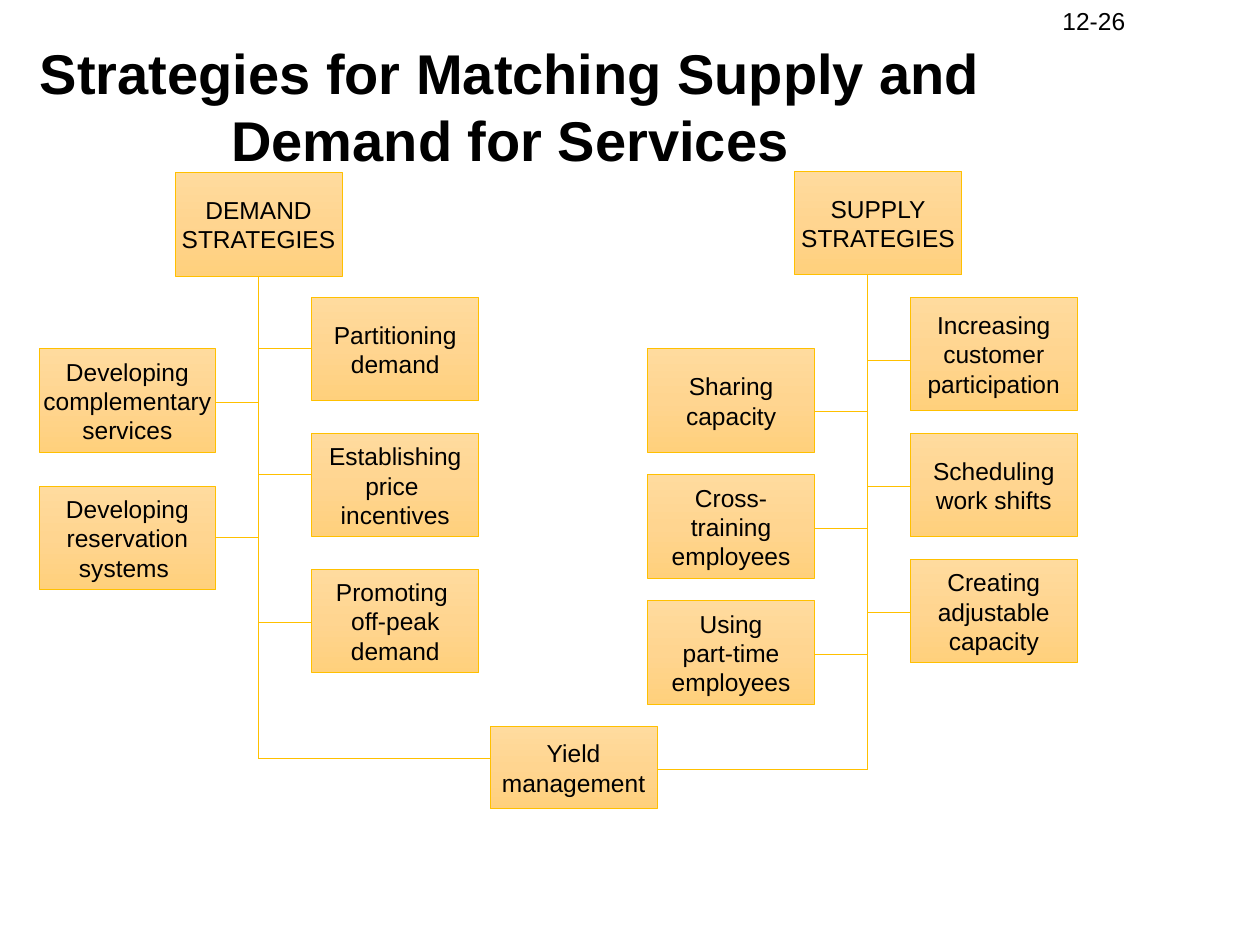
from copy import deepcopy

from lxml import etree
from pptx import Presentation
from pptx.dml.color import RGBColor
from pptx.enum import shapes, text
from pptx.oxml import ns
from pptx.util import Pt

BLACK = RGBColor(0x00, 0x00, 0x00)
GOLD = RGBColor(0xFF, 0xC0, 0x00)
GRADIENT = (
    (0, RGBColor(0xFF, 0xDB, 0x9E)),
    (0.5, RGBColor(0xFF, 0xD5, 0x90)),
    (1, RGBColor(0xFF, 0xD0, 0x7C)),
)
CARD_WIDTH, CARD_HEIGHT = 95.4, 59.2

DEMAND_LEFT = [
    ("Developing\ncomplementary\nservices", 100.8, 131.1),
    ("Developing\nreservation\nsystems ", 179.3, 208.8),
]
DEMAND_RIGHT = [
    ("Partitioning\ndemand", 71.3, 100.8),
    ("Establishing\nprice \nincentives", 149.1, 172.8),
    ("Promoting \noff-peak\ndemand", 226.8, 257.1),
]
SUPPLY_LEFT = [
    ("Sharing\ncapacity", 101.5, 137.5),
    ("Cross-\ntraining\nemployees", 173.5, 203.8),
    ("Using\npart-time\nemployees", 245.5, 275.8),
]
SUPPLY_RIGHT = [
    ("Increasing\ncustomer\nparticipation", 72, 108),
    ("Scheduling\nwork shifts", 149.8, 180),
    ("Creating\nadjustable\ncapacity", 221.8, 252),
]


def write(frame, wording, size, align, bold=False):
    """Fill a text frame with one paragraph per line of wording."""
    frame.text = wording
    for paragraph in frame.paragraphs:
        paragraph.alignment = align
        paragraph.font.name = "Arial"
        paragraph.font.size = Pt(size)
        paragraph.font.bold = bold
        paragraph.font.color.rgb = BLACK


def add_card(slide, wording, left, top, width=CARD_WIDTH, height=CARD_HEIGHT):
    """Add a gradient-filled box with centred text."""
    card = slide.shapes.add_shape(
        shapes.MSO_SHAPE.RECTANGLE, Pt(left), Pt(top), Pt(width), Pt(height))
    card.shadow.inherit = False
    card.fill.gradient()
    card.fill.gradient_angle = 270
    stop_list = card._element.spPr.find(".//" + ns.qn("a:gsLst"))
    stop_list.insert(1, deepcopy(stop_list[0]))
    for stop, (position, color) in zip(card.fill.gradient_stops, GRADIENT):
        stop.position = position
        stop.color.rgb = color
    card.line.color.rgb = GOLD
    card.line.width = Pt(0.5)
    frame = card.text_frame
    frame.word_wrap = False
    frame.vertical_anchor = text.MSO_ANCHOR.MIDDLE
    write(frame, wording, 14, text.PP_ALIGN.CENTER)


def add_link(slide, x1, y1, x2, y2):
    """Add a thin straight line between two points."""
    link = slide.shapes.add_connector(
        shapes.MSO_CONNECTOR.STRAIGHT, Pt(x1), Pt(y1), Pt(x2), Pt(y2))
    link.line.color.rgb = GOLD
    link.line.width = Pt(0.5)
    etree.SubElement(link._element.spPr, ns.qn("a:effectLst"))


def add_strategies(slide, box, heading, head_x, trunk_x, left_cards,
                   right_cards, left_width=CARD_WIDTH, first_height=CARD_HEIGHT):
    """Add a heading, its trunk and the strategies on both sides within box."""
    left, top, width, height = box
    trunk = left + trunk_x
    right = left + width - CARD_WIDTH
    add_link(slide, trunk, top + CARD_HEIGHT, trunk, top + height)
    for wording, card_y, link_y in left_cards:
        add_link(slide, left + left_width, top + link_y, trunk, top + link_y)
        add_card(slide, wording, left, top + card_y, left_width)
    for index, (wording, card_y, link_y) in enumerate(right_cards):
        card_height = CARD_HEIGHT if index else first_height
        add_link(slide, trunk, top + link_y, right, top + link_y)
        add_card(slide, wording, right, top + card_y, height=card_height)
    add_card(slide, heading, left + head_x, top)


def add_yield(slide, box, demand_end, supply_end):
    """Add the yield management box and join it to both trunk ends."""
    left, top, width, height = box
    add_link(slide, *demand_end, left, demand_end[1])
    add_link(slide, left + width, supply_end[1], *supply_end)
    add_card(slide, "Yield\nmanagement", *box)


def add_heading(slide, box):
    """Place and format the slide title."""
    title = slide.shapes.title
    title.left, title.top, title.width, title.height = map(Pt, box)
    frame = title.text_frame
    frame.word_wrap = True
    frame.auto_size = text.MSO_AUTO_SIZE.NONE
    frame.vertical_anchor = text.MSO_ANCHOR.BOTTOM
    write(frame, "Strategies for Matching Supply and Demand for Services",
          32, text.PP_ALIGN.CENTER, bold=True)


def add_page_number(slide, box):
    """Add the page number."""
    number = slide.shapes.add_textbox(*map(Pt, box))
    number.text_frame.word_wrap = True
    write(number.text_frame, "12-26", 14, text.PP_ALIGN.LEFT)


def main():
    """Build and save the slide."""
    deck = Presentation()
    deck.slide_width, deck.slide_height = Pt(720), Pt(540)
    slide = deck.slides.add_slide(deck.slide_layouts[5])
    add_page_number(slide, (600, 0, 120, 37.4))
    add_heading(slide, (-46.8, 11.5, 676.8, 90.7))
    add_strategies(slide, (22.3, 98.6, 251.3, 334.9), "DEMAND\nSTRATEGIES",
                   77.8, 125.3, DEMAND_LEFT, DEMAND_RIGHT, left_width=101)
    add_strategies(slide, (370.1, 97.9, 245.5, 342), "SUPPLY\nSTRATEGIES",
                   84, 125.8, SUPPLY_LEFT, SUPPLY_RIGHT, first_height=64.8)
    add_yield(slide, (280.1, 415.4, CARD_WIDTH, 46.8),
              (147.6, 433.5), (495.9, 439.9))
    deck.save("out.pptx")


if __name__ == "__main__":
    main()
